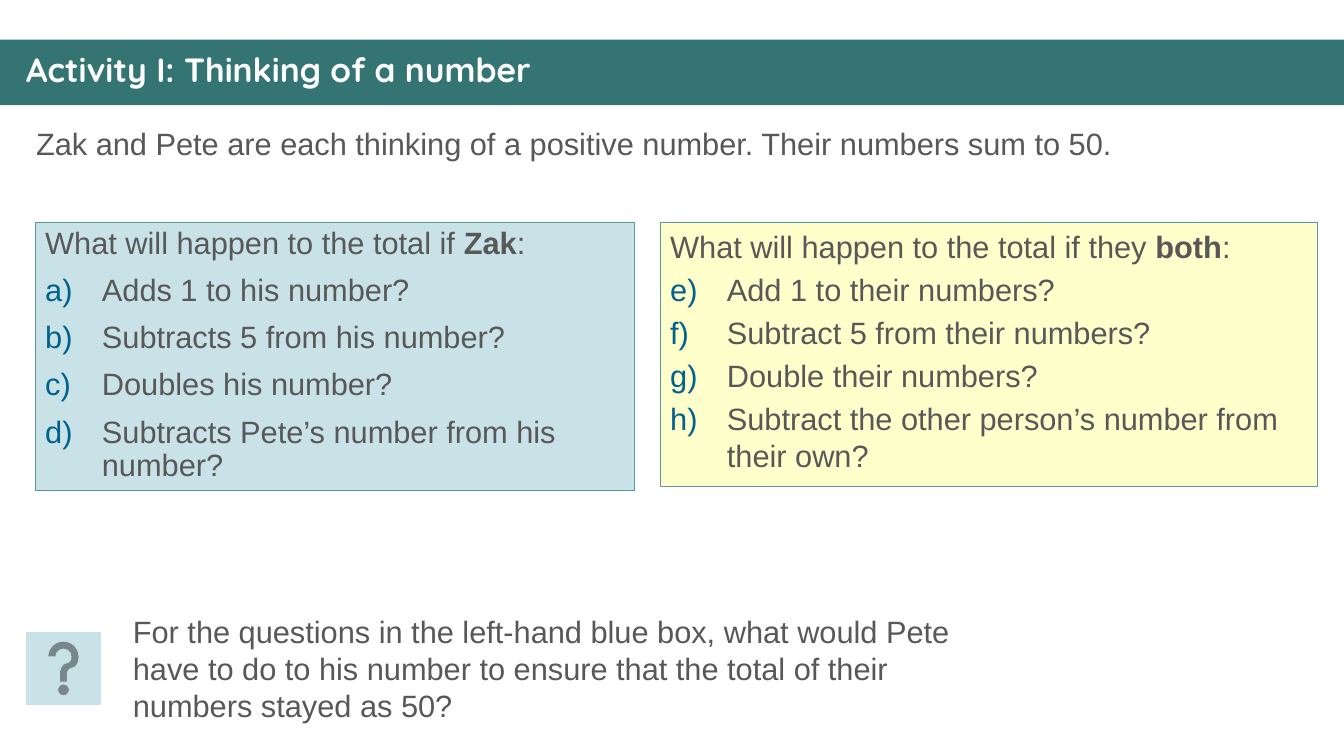
from lxml.etree import SubElement
from pptx import Presentation
from pptx.dml.color import RGBColor
from pptx.enum.shapes import MSO_SHAPE
from pptx.enum.text import MSO_ANCHOR, PP_ALIGN
from pptx.oxml.ns import qn
from pptx.util import Cm, Pt

TEAL = RGBColor(0x34, 0x75, 0x74)
EDGE = RGBColor(0x5B, 0x98, 0x98)
BLUE = RGBColor(0xC8, 0xE2, 0xE8)
YELLOW = RGBColor(0xFF, 0xFF, 0xCC)
GREY = RGBColor(0x58, 0x58, 0x58)
WHITE = RGBColor(0xFF, 0xFF, 0xFF)
LETTER_COLOR = "00628C"

TITLE = "Activity I: Thinking of a number"
INTRO = "Zak and Pete are each thinking of a positive number. Their numbers sum to 50."
FOLLOW_UP = (
    "For the questions in the left-hand blue box, what would Pete have to do to "
    "his number to ensure that the total of their numbers stayed as 50?"
)

TIGHT = {"line_spacing": 0.9, "space_before": Pt(10)}
LOOSE = {"line_spacing": 1.0, "space_before": Pt(4.4)}
BODY_FONT = {"name": "Arial", "size": Pt(22), "bold": False}
TITLE_FONT = {"name": "Quicksand", "size": Pt(24), "bold": True}

QUESTION_BOXES = [
    {
        "place": (16.64, 5.61, 16.56, 6.65),
        "fill": YELLOW, "edge": 0.5, "spacing": LOOSE, "start": 5,
        "lead": ("What will happen to the total if they ", "both", ":"),
        "questions": [
            "Add 1 to their numbers?",
            "Subtract 5 from their numbers?",
            "Double their numbers?",
            "Subtract the other person’s number from their own?",
        ],
    },
    {
        "place": (0.89, 5.61, 15.11, 6.76),
        "fill": BLUE, "edge": 0.75, "spacing": TIGHT, "start": 1,
        "lead": ("What will happen to the total if ", "Zak", ":"),
        "questions": [
            "Adds 1 to his number?",
            "Subtracts 5 from his number?",
            "Doubles his number?",
            "Subtracts Pete’s number from his number?",
        ],
    },
]


def apply_format(target, values):
    for name, value in values.items():
        setattr(target, name, value)


def add_block(slide, kind, place, fill, edge_color=None, edge_width=0.5):
    shape = slide.shapes.add_shape(kind, *map(Cm, place))
    shape.shadow.inherit = False
    shape.fill.solid()
    shape.fill.fore_color.rgb = fill
    if edge_color is None:
        shape.line.fill.background()
    else:
        shape.line.color.rgb = edge_color
        shape.line.width = Pt(edge_width)
    return shape


def add_letter(paragraph, start):
    properties = paragraph._p.get_or_add_pPr()
    properties.set("marL", str(Cm(1.43)))
    properties.set("indent", str(-Cm(1.43)))
    color = SubElement(properties, qn("a:buClr"))
    SubElement(color, qn("a:srgbClr"), val=LETTER_COLOR)
    SubElement(properties, qn("a:buFont"), typeface="Arial")
    SubElement(properties, qn("a:buAutoNum"), type="alphaLcParenR", startAt=str(start))


def fill_text(shape, entries, spacing, font=BODY_FONT, color=GREY, start=1):
    frame = shape.text_frame
    apply_format(frame, {"word_wrap": True, "vertical_anchor": MSO_ANCHOR.TOP})
    for index, pieces in enumerate(entries):
        paragraph = frame.add_paragraph() if index else frame.paragraphs[0]
        if index:
            add_letter(paragraph, start)
        apply_format(paragraph, {**spacing, "alignment": PP_ALIGN.LEFT})
        if not index:
            paragraph.space_before = Pt(0)
        for position, piece in enumerate(pieces):
            run = paragraph.add_run()
            run.text = piece
            apply_format(run.font, font)
            run.font.color.rgb = color
            if position == 1:
                run.font.bold = True


def add_text(slide, place, text, spacing, font=BODY_FONT, color=GREY):
    box = slide.shapes.add_textbox(*map(Cm, place))
    fill_text(box, [(text,)], spacing, font, color)


def main():
    presentation = Presentation()
    presentation.slide_width = Cm(33.87)
    presentation.slide_height = Cm(19.05)
    slide = presentation.slides.add_slide(presentation.slide_layouts[6])

    add_block(slide, MSO_SHAPE.RECTANGLE, (0, 1, 33.87, 1.65), TEAL)
    add_text(slide, (0.66, 3.12, 32.54, 1.5), INTRO, TIGHT)
    add_text(slide, (0.41, 1.22, 33.12, 1.19), TITLE, TIGHT, TITLE_FONT, WHITE)
    add_block(slide, MSO_SHAPE.ACTION_BUTTON_HELP, (0.66, 15.93, 1.88, 1.83), BLUE, BLUE)
    add_text(slide, (3.1, 15.32, 22.25, 3.07), FOLLOW_UP, LOOSE)

    for box in QUESTION_BOXES:
        shape = add_block(
            slide, MSO_SHAPE.RECTANGLE, box["place"], box["fill"], EDGE, box["edge"]
        )
        entries = [box["lead"]] + [(question,) for question in box["questions"]]
        fill_text(shape, entries, box["spacing"], start=box["start"])

    presentation.save("out.pptx")


if __name__ == "__main__":
    main()
